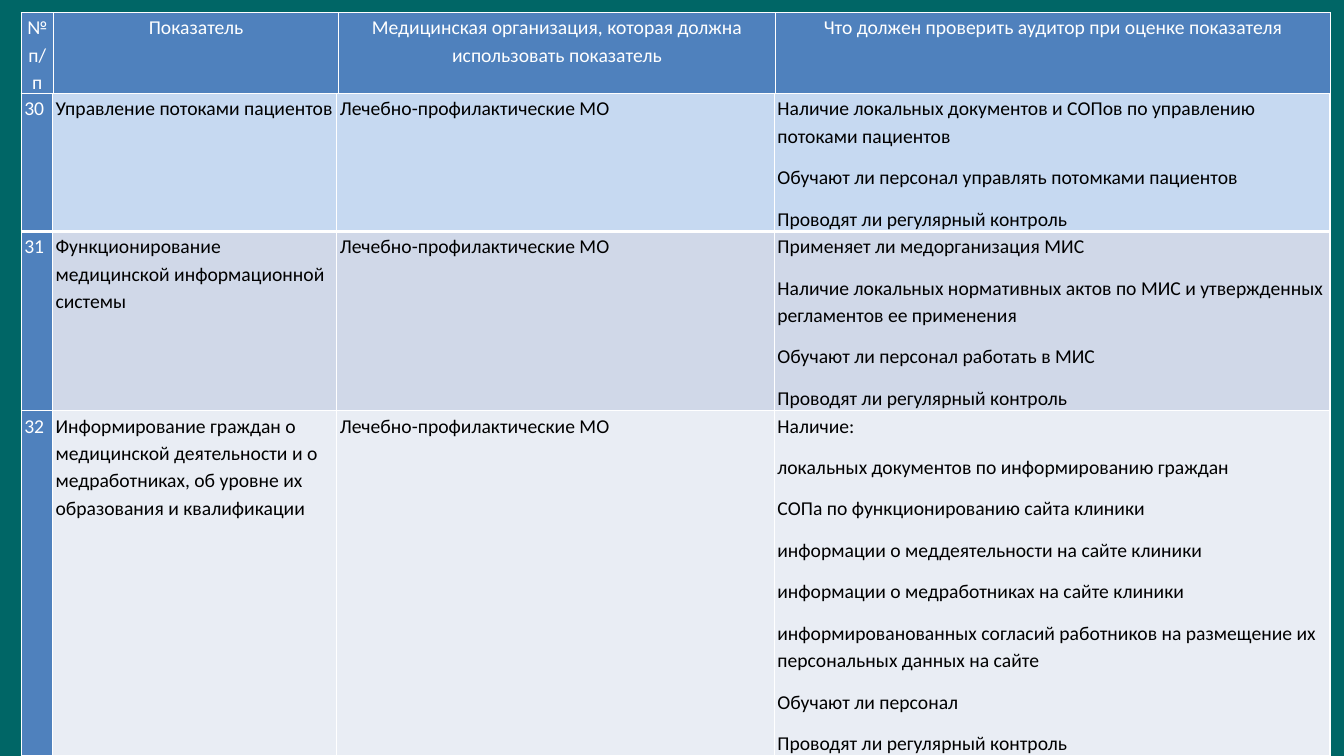
"""Build a slide with a table of audit indicators 30 to 32 for medical organisations."""
from lxml import etree
from pptx import Presentation
from pptx import util as u
from pptx.dml.color import RGBColor
from pptx.enum import text as t
from pptx.oxml import ns

TEAL = RGBColor(0x00, 0x66, 0x66)
BLUE = RGBColor(0x4F, 0x81, 0xBD)
SKY = RGBColor(0xC6, 0xD9, 0xF1)
MIST = RGBColor(0xD0, 0xD8, 0xE8)
PALE = RGBColor(0xE9, 0xED, 0xF4)
WHITE = RGBColor(0xFF, 0xFF, 0xFF)
BLACK = RGBColor(0x00, 0x00, 0x00)

CLINICS = "Лечебно-профилактические МО"
CONTROL = "Проводят ли регулярный контроль"
HEADER = [
    ["№ п/п"],
    ["Показатель"],
    ["Медицинская организация, которая должна использовать показатель"],
    ["Что должен проверить аудитор при оценке показателя"],
]
INDICATORS = [
    [["30"], ["Управление потоками пациентов"], [CLINICS], [
        "Наличие локальных документов и СОПов по управлению потоками пациентов",
        "Обучают ли персонал управлять потомками пациентов",
        CONTROL,
    ]],
    [["31"], ["Функционирование медицинской информационной системы"], [CLINICS], [
        "Применяет ли медорганизация МИС",
        "Наличие локальных нормативных актов по МИС и утвержденных регламентов ее применения",
        "Обучают ли персонал работать в МИС",
        CONTROL,
    ]],
    [["32"], ["Информирование граждан о медицинской деятельности и о медработниках, "
              "об уровне их образования и квалификации"], [CLINICS], [
        "Наличие:",
        "локальных документов по информированию граждан",
        "СОПа по функционированию сайта клиники",
        "информации о меддеятельности на сайте клиники",
        "информации о медработниках на сайте клиники",
        "информированованных согласий работников на размещение их персональных данных на сайте",
        "Обучают ли персонал",
        CONTROL,
    ]],
]
TABLES = [
    {"top": 1.67, "columns": [2.4, 21.23, 32.48, 41.34], "rows": [10.73],
     "content": [HEADER], "fills": [BLUE], "align": t.PP_ALIGN.CENTER, "color": WHITE},
    {"top": 12.4, "columns": [2.33, 21.15, 32.56, 41.34], "rows": [18.13, 23.73, 44.8],
     "content": INDICATORS, "fills": [SKY, MIST, PALE], "align": t.PP_ALIGN.LEFT, "color": BLACK},
]


def write_cell(cell, paragraphs, *, fill, color, align, bottom):
    """Fill, border and write one table cell."""
    cell.margin_left = cell.margin_right = u.Inches(0.03)
    cell.margin_top = cell.margin_bottom = 0
    properties = cell._tc.get_or_add_tcPr()
    for side, points in (("L", 1), ("R", 1), ("T", 1), ("B", bottom)):
        border = etree.SubElement(properties, ns.qn(f"a:ln{side}"), w=str(u.Pt(points)))
        solid = etree.SubElement(border, ns.qn("a:solidFill"))
        etree.SubElement(solid, ns.qn("a:srgbClr"), val=str(WHITE))
    cell.fill.solid()
    cell.fill.fore_color.rgb = fill
    for index, text in enumerate(paragraphs):
        para = cell.text_frame.paragraphs[0] if index == 0 else cell.text_frame.add_paragraph()
        para.alignment = align
        para.line_spacing = 1.15
        para.space_after = u.Pt(10)
        span = para.add_run()
        span.text = text
        span.font.name = "Calibri"
        span.font.size = u.Pt(14)
        span.font.bold = False
        span.font.color.rgb = color


deck = Presentation()
deck.slide_width, deck.slide_height = u.Inches(13.33), u.Inches(7.5)
page = deck.slides.add_slide(deck.slide_layouts[6])
page.background.fill.solid()
page.background.fill.fore_color.rgb = TEAL
across, down = deck.slide_width / 100, deck.slide_height / 100

for part in TABLES:
    frame = page.shapes.add_table(
        len(part["rows"]), len(part["columns"]), int(1.58 * across), int(part["top"] * down),
        int(sum(part["columns"]) * across), int(sum(part["rows"]) * down))
    table = frame.table
    table.first_row = table.horz_banding = False
    for column, share in zip(table.columns, part["columns"]):
        column.width = int(share * across)
    for row, share in zip(table.rows, part["rows"]):
        row.height = int(share * down)
    for r, (entries, fill) in enumerate(zip(part["content"], part["fills"])):
        for c, paragraphs in enumerate(entries):
            write_cell(table.cell(r, c), paragraphs, align=part["align"],
                       fill=BLUE if c == 0 else fill,
                       color=WHITE if c == 0 else part["color"],
                       bottom=3 if r == 0 else 1)

deck.save("out.pptx")
